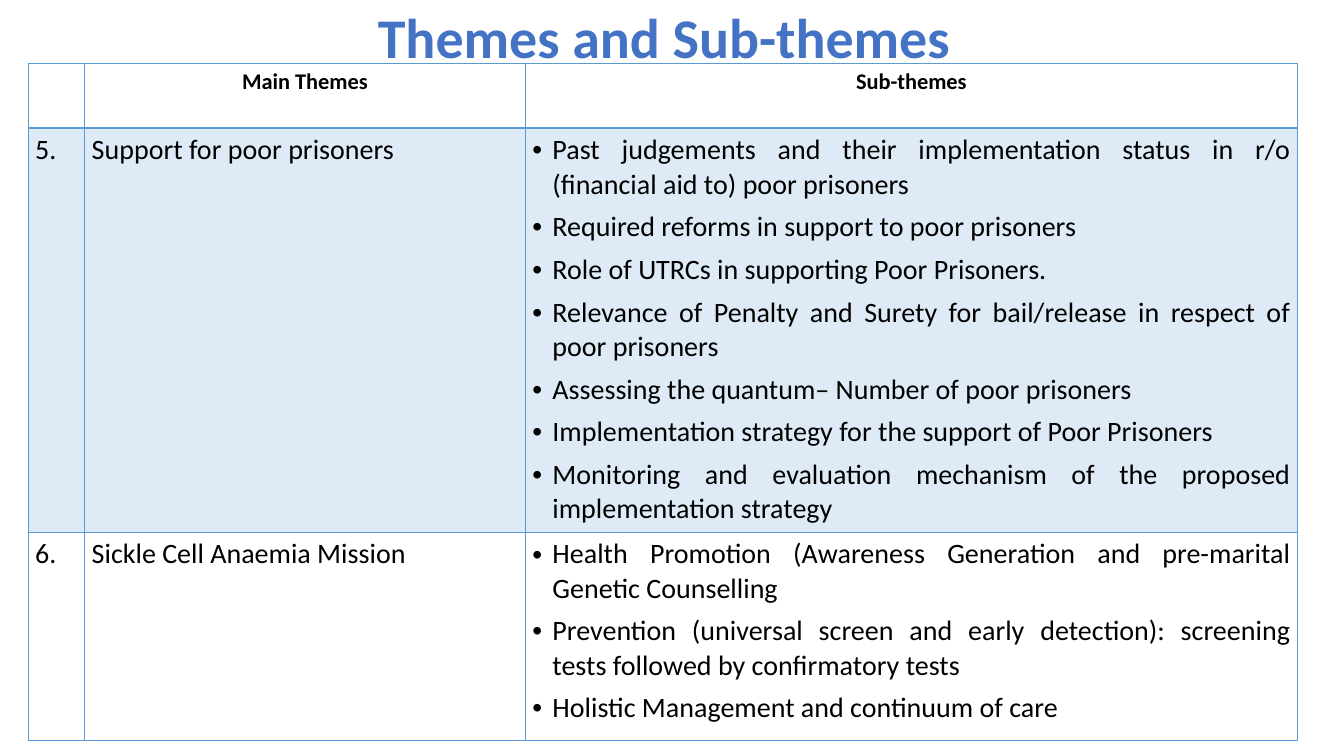
from dataclasses import dataclass

from lxml.etree import SubElement
from pptx import Presentation
from pptx.dml.color import RGBColor
from pptx.enum.text import MSO_ANCHOR, MSO_AUTO_SIZE, PP_ALIGN
from pptx.oxml.ns import qn
from pptx.table import _Cell
from pptx.text.text import _Paragraph
from pptx.util import Inches, Pt

FONT = "Calibri"
TITLE_BLUE = RGBColor(0x44, 0x72, 0xC4)
BORDER_BLUE = RGBColor(0x5B, 0x9B, 0xD5)
BAND_BLUE = RGBColor(0xDE, 0xEB, 0xF7)
BLACK = RGBColor(0, 0, 0)


@dataclass
class Theme:
    number: str
    name: str
    sub_themes: list[str]
    height: float
    banded: bool


HEADINGS = ["", "Main Themes", "Sub-themes"]
HEADER_HEIGHT = 0.64
COLUMN_WIDTHS = [0.56, 4.37, 7.66]
THEMES = [
    Theme("5.", "Support for poor prisoners", [
        "Past judgements and their implementation status in r/o (financial aid to) poor prisoners",
        "Required reforms in support to poor prisoners",
        "Role of UTRCs in supporting Poor Prisoners.",
        "Relevance of Penalty and Surety for bail/release in respect of poor prisoners",
        "Assessing the quantum– Number of poor prisoners",
        "Implementation strategy for the support of Poor Prisoners",
        "Monitoring and evaluation mechanism of the proposed implementation strategy",
    ], 4.01, True),
    Theme("6.", "Sickle Cell Anaemia Mission", [
        "Health Promotion (Awareness Generation and pre-marital Genetic Counselling",
        "Prevention (universal screen and early detection): screening tests followed by "
        "confirmatory tests",
        "Holistic Management and continuum of care",
    ], 2.07, False),
]


def add_run(p: _Paragraph, text: str, size: float, color: RGBColor, bold: bool = False) -> None:
    r = p.add_run()
    r.text = text
    r.font.name = FONT
    r.font.size = Pt(size)
    r.font.bold = bold
    r.font.color.rgb = color


def set_bullet(p: _Paragraph) -> None:
    pPr = p._p.get_or_add_pPr()
    pPr.set("marL", str(Inches(0.2)))
    pPr.set("indent", str(-Inches(0.2)))
    SubElement(pPr, qn("a:buFont"), typeface="Arial")
    SubElement(pPr, qn("a:buChar"), char="•")


def format_cell(cell: _Cell, top: float, bottom: float, banded: bool) -> None:
    """Set the margins, then the borders, then the fill."""
    cell.margin_left = cell.margin_right = Inches(0.07)
    cell.margin_top = cell.margin_bottom = Inches(0.05)
    tcPr = cell._tc.get_or_add_tcPr()
    for side, width in {"L": 1, "R": 1, "T": top, "B": bottom}.items():
        ln = SubElement(tcPr, qn(f"a:ln{side}"), w=str(Pt(width)))
        line_fill = SubElement(ln, qn("a:solidFill"))
        SubElement(line_fill, qn("a:srgbClr"), val=str(BORDER_BLUE))
    if banded:
        cell.fill.solid()
        cell.fill.fore_color.rgb = BAND_BLUE
    else:
        cell.fill.background()


def fill_cell(cell: _Cell, lines: list[str], bulleted: bool = False) -> None:
    tf = cell.text_frame
    for i, line in enumerate(lines):
        p = tf.add_paragraph() if i else tf.paragraphs[0]
        p.space_after = Pt(6)
        if bulleted:
            p.alignment = PP_ALIGN.JUSTIFY
            set_bullet(p)
        add_run(p, line, 20, BLACK)


def main() -> None:
    prs = Presentation()
    prs.slide_width, prs.slide_height = Inches(13.33), Inches(7.5)
    s = prs.slides.add_slide(prs.slide_layouts[5])

    # Title
    title = s.shapes.title
    title.left, title.top = Inches(2.31), Inches(0.15)
    title.width, title.height = Inches(8.55), Inches(0.51)
    tf = title.text_frame
    tf.auto_size = MSO_AUTO_SIZE.NONE
    tf.vertical_anchor = MSO_ANCHOR.MIDDLE
    p = tf.paragraphs[0]
    p.alignment = PP_ALIGN.CENTER
    p.line_spacing = 0.9
    add_run(p, "Themes and Sub-themes", 40, TITLE_BLUE, bold=True)

    # Table grid
    heights = [HEADER_HEIGHT] + [theme.height for theme in THEMES]
    table = s.shapes.add_table(
        len(heights), len(COLUMN_WIDTHS), Inches(0.28), Inches(0.63),
        Inches(sum(COLUMN_WIDTHS)), Inches(sum(heights))).table
    table.horz_banding = False
    for column, width in zip(table.columns, COLUMN_WIDTHS):
        column.width = Inches(width)
    for row, height in zip(table.rows, heights):
        row.height = Inches(height)

    # Header row
    for cell, heading in zip(table.rows[0].cells, HEADINGS):
        format_cell(cell, top=1, bottom=2, banded=False)
        if heading:
            p = cell.text_frame.paragraphs[0]
            p.alignment = PP_ALIGN.CENTER
            add_run(p, heading, 16, BLACK, bold=True)

    # Theme rows
    for i, theme in enumerate(THEMES, start=1):
        cells = list(table.rows[i].cells)
        for cell in cells:
            format_cell(cell, top=2 if i == 1 else 1, bottom=1, banded=theme.banded)
        fill_cell(cells[0], [theme.number])
        fill_cell(cells[1], [theme.name])
        fill_cell(cells[2], theme.sub_themes, bulleted=True)

    prs.save("out.pptx")


if __name__ == "__main__":
    main()
